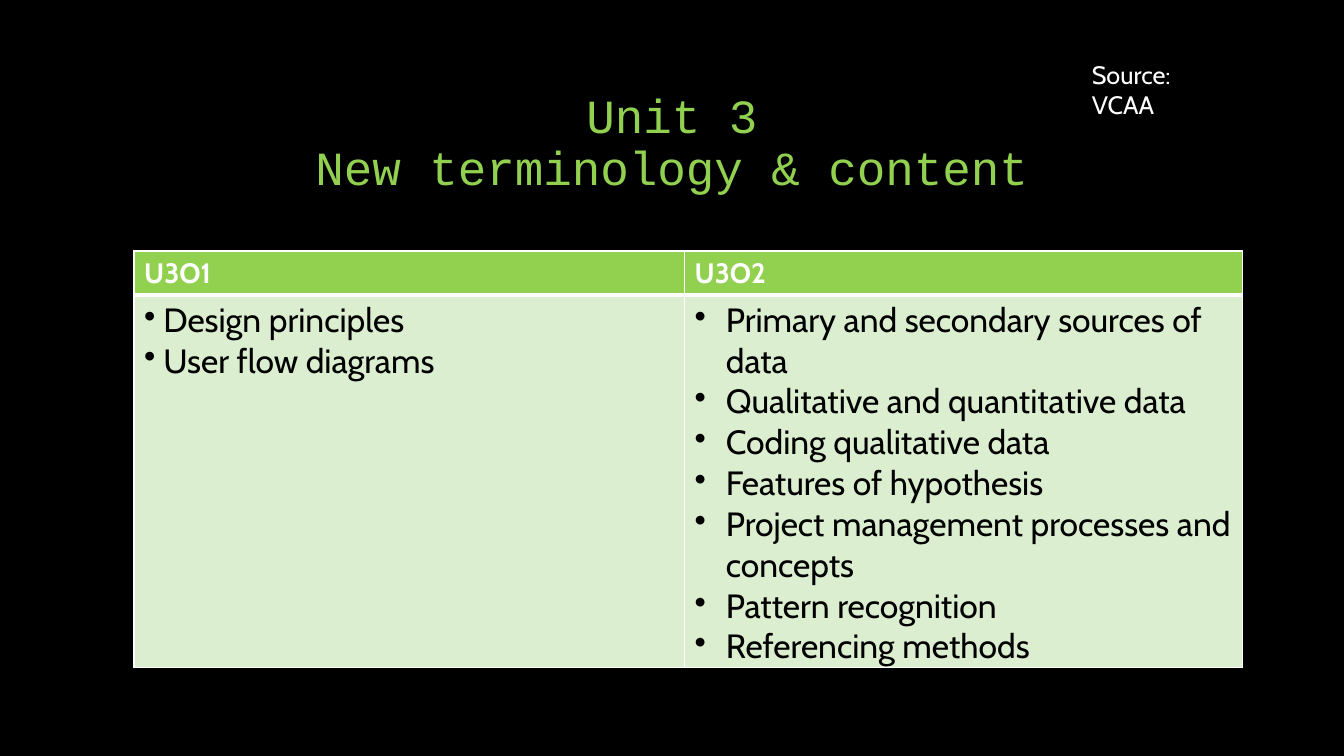
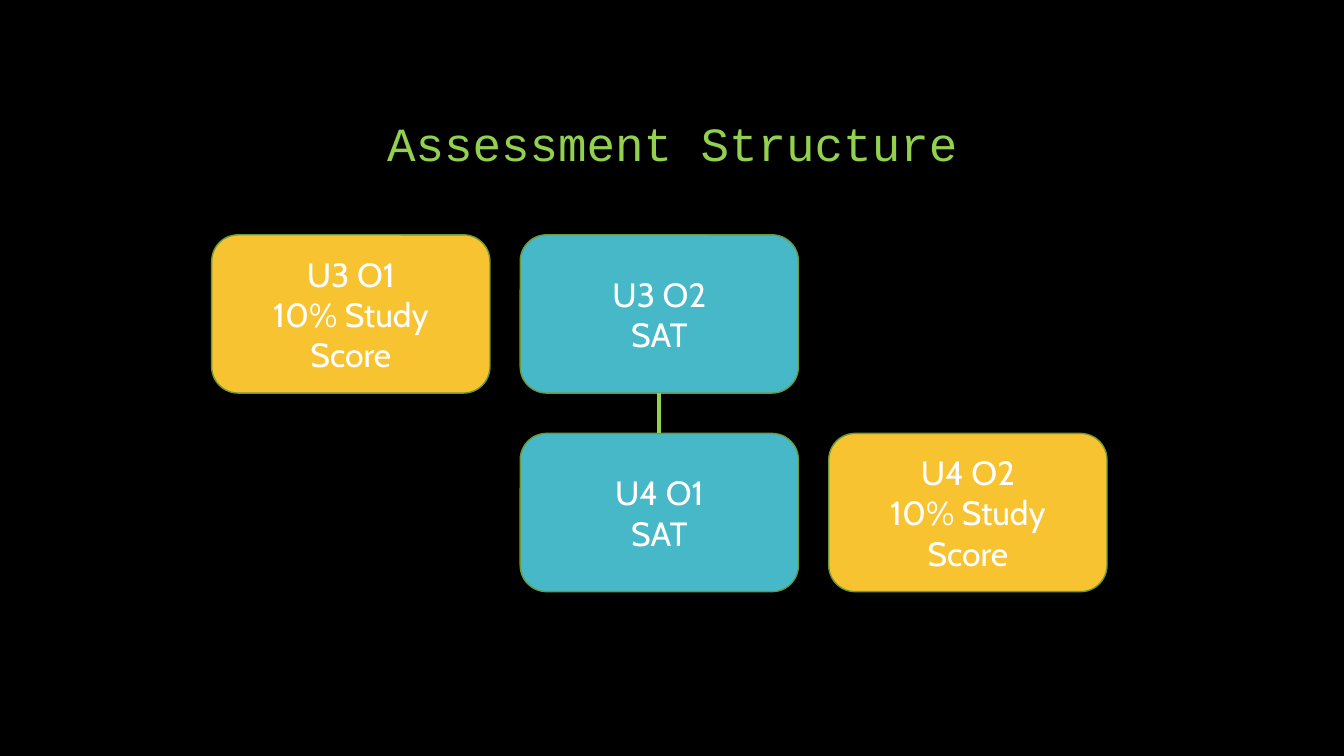
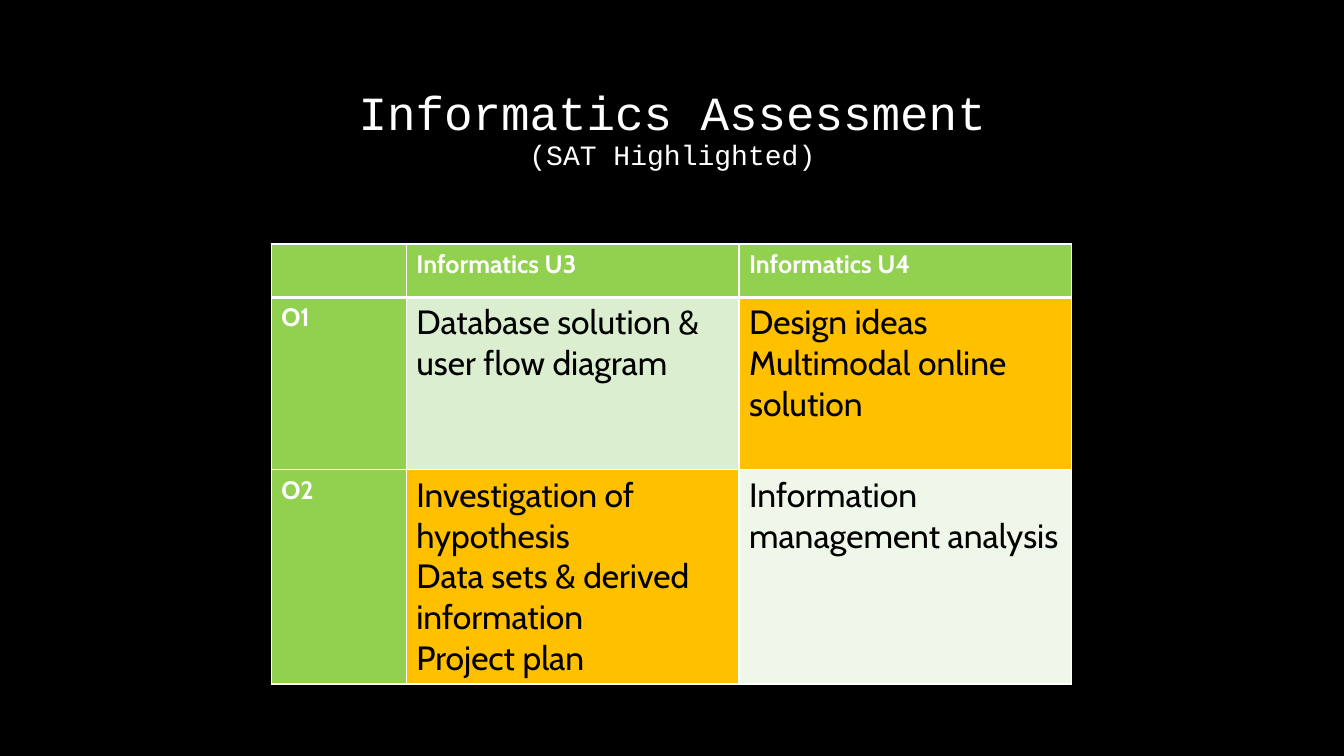
import pptx
import pptx.dml.color
import pptx.enum.shapes
import pptx.enum.text
import pptx.oxml
import pptx.oxml.ns
import pptx.util

Inches, Pt = pptx.util.Inches, pptx.util.Pt
qn = pptx.oxml.ns.qn
CENTER = pptx.enum.text.PP_ALIGN.CENTER

BLACK, WHITE = "000000", "FFFFFF"
GREEN, PALE_GREEN, PALEST_GREEN, OUTLINE = "92D050", "DCEED0", "EEF7E9", "6C9A3B"
ORANGE, YELLOW, TEAL = "FFC000", "F7C331", "47B8C7"
BODY_FONT, TITLE_FONT = "Cabin", "Courier New"

# A table cell is (paragraphs, fill, bullet indent in inches); a header cell is plain text.
TERMS = {
    "at": (1.33, 2.49), "columns": [5.46, 5.53], "rows": [0.43, 3.7], "header_size": 20,
    "cells": [
        ["U3O1", "U3O2"],
        [
            (["Design principles", "User flow diagrams"], PALE_GREEN, 0.19),
            (["Primary and secondary sources of data",
              "Qualitative and quantitative data",
              "Coding qualitative data",
              "Features of hypothesis",
              "Project management processes and concepts",
              "Pattern recognition",
              "Referencing methods"], PALE_GREEN, 0.31),
        ],
    ],
}
ASSESSMENT = {
    "at": (2.69, 2.42), "columns": [1.34, 3.3, 3.3], "rows": [0.53, 1.71, 2.1], "header_size": 18,
    "cells": [
        ["", "Informatics U3", "Informatics U4"],
        ["O1",
         (["Database solution & user flow diagram"], PALE_GREEN, 0),
         (["Design ideas", "Multimodal online solution"], ORANGE, 0)],
        ["O2",
         (["Investigation of hypothesis\vData sets & derived information", "Project plan"], ORANGE, 0),
         (["Information management analysis"], PALEST_GREEN, 0)],
    ],
}
# Text, column, row, fill
OUTCOMES = [
    ("U3 O1\v10% Study Score", 0, 0, YELLOW),
    ("U3 O2\vSAT", 1, 0, TEAL),
    ("U4 O1\vSAT", 1, 1, TEAL),
    ("U4 O2\v10% Study Score", 2, 1, YELLOW),
]
LINKED = (1, 2)


def color(value):
    return pptx.dml.color.RGBColor.from_string(value)


def paint(fill, value):
    fill.solid()
    fill.fore_color.rgb = color(value)


def style_text(frame, size, value, bold=False):
    for para in frame.paragraphs:
        for span in para.runs:
            span.font.name = BODY_FONT
            span.font.size = Pt(size)
            span.font.bold = bold
            span.font.color.rgb = color(value)


def set_up_master(deck):
    """Give every slide the black background and the title lettering."""
    master = deck.slide_master
    paint(master.background.fill, BLACK)
    level = master.element.find(".//" + qn("p:titleStyle")).find(qn("a:lvl1pPr"))
    letters = level.find(qn("a:defRPr"))
    letters.set("sz", "3400")
    letters.find(qn("a:latin")).set("typeface", TITLE_FONT)


def add_page(deck, title, place, value):
    page = deck.slides.add_slide(deck.slide_layouts[5])
    box = page.shapes.title
    box.left, box.top, box.width, box.height = map(Inches, place)
    frame = box.text_frame
    frame.text = title
    frame.auto_size = pptx.enum.text.MSO_AUTO_SIZE.NONE
    frame.vertical_anchor = pptx.enum.text.MSO_ANCHOR.BOTTOM
    para = frame.paragraphs[0]
    para.alignment = CENTER
    para.line_spacing = 0.9
    for span in para.runs:
        span.font.name = TITLE_FONT
        span.font.color.rgb = color(value)
    return page


def add_borders(cell, bottom):
    properties = cell._tc.get_or_add_tcPr()
    for side, points in (("L", 1), ("R", 1), ("T", 1), ("B", bottom)):
        properties.append(pptx.oxml.parse_xml(
            f'<a:ln{side} xmlns:a="http://schemas.openxmlformats.org/drawingml/2006/main" '
            f'w="{Pt(points)}"><a:solidFill><a:srgbClr val="{WHITE}"/></a:solidFill></a:ln{side}>'))


def add_bullet(para, indent):
    properties = para._p.get_or_add_pPr()
    properties.set("marL", str(Inches(indent)))
    properties.set("indent", str(-Inches(indent)))
    bullet = properties.makeelement(qn("a:buChar"), {"char": "•"})
    properties.append(bullet)


def fill_cell(cell, content, header_size):
    is_header = isinstance(content, str)
    lines, fill, indent = ([content], GREEN, 0) if is_header else content
    paint(cell.fill, fill)
    frame = cell.text_frame
    frame.text = "\n".join(lines)
    if is_header:
        style_text(frame, header_size, WHITE, bold=True)
    else:
        style_text(frame, 24, BLACK)
    if indent:
        for para in frame.paragraphs:
            add_bullet(para, indent)


def add_grid(page, grid):
    columns, rows = grid["columns"], grid["rows"]
    left, top = grid["at"]
    table = page.shapes.add_table(
        len(rows), len(columns), Inches(left), Inches(top),
        Inches(sum(columns)), Inches(sum(rows))).table
    for column, width in zip(table.columns, columns):
        column.width = Inches(width)
    for number, (row, height) in enumerate(zip(table.rows, rows)):
        row.height = Inches(height)
        for cell, content in zip(row.cells, grid["cells"][number]):
            add_borders(cell, bottom=1 if number else 3)
            fill_cell(cell, content, grid["header_size"])


def add_outcome(page, text, column, row, fill):
    box = page.shapes.add_shape(
        pptx.enum.shapes.MSO_SHAPE.ROUNDED_RECTANGLE,
        Inches(2.1 + 3.06 * column), Inches(2.33 + 1.97 * row), Inches(2.76), Inches(1.57))
    box.shadow.inherit = False
    paint(box.fill, fill)
    box.line.color.rgb = color(OUTLINE)
    box.line.width = Pt(1)
    frame = box.text_frame
    frame.word_wrap = True
    frame.margin_left = frame.margin_right = Inches(0.15)
    frame.vertical_anchor = pptx.enum.text.MSO_ANCHOR.MIDDLE
    frame.text = text
    frame.paragraphs[0].alignment = CENTER
    style_text(frame, 24, WHITE)
    return box


def link_down(page, upper, lower):
    link = page.shapes.add_connector(pptx.enum.shapes.MSO_CONNECTOR.STRAIGHT, 0, 0, 0, 0)
    link.begin_connect(upper, 2)
    link.end_connect(lower, 0)
    link.line.color.rgb = color(GREEN)
    link.line.width = Pt(3)
    properties = link._element.spPr
    properties.append(properties.makeelement(qn("a:effectLst"), {}))


def add_source(page, text):
    box = page.shapes.add_textbox(Inches(10.73), Inches(0.54), Inches(1.61), Inches(0.4))
    box.text_frame.word_wrap = True
    box.text_frame.text = text
    style_text(box.text_frame, 18, WHITE)


def main():
    deck = pptx.Presentation()
    deck.slide_width, deck.slide_height = Inches(13.33), Inches(7.5)
    set_up_master(deck)
    title_place = (1.67, 0.5, 10, 1.25)

    page = add_page(deck, "Unit 3\vNew terminology & content", (1, 0.24, 11.33, 1.75), GREEN)
    add_source(page, "Source: VCAA")
    add_grid(page, TERMS)

    page = add_page(deck, "Assessment Structure", title_place, GREEN)
    boxes = [add_outcome(page, *outcome) for outcome in OUTCOMES]
    link_down(page, *(boxes[number] for number in LINKED))

    page = add_page(deck, "Informatics Assessment\v(SAT Highlighted)", title_place, WHITE)
    page.shapes.title.text_frame.paragraphs[0].runs[1].font.size = Pt(20)
    add_grid(page, ASSESSMENT)

    deck.save("out.pptx")


if __name__ == "__main__":
    main()
